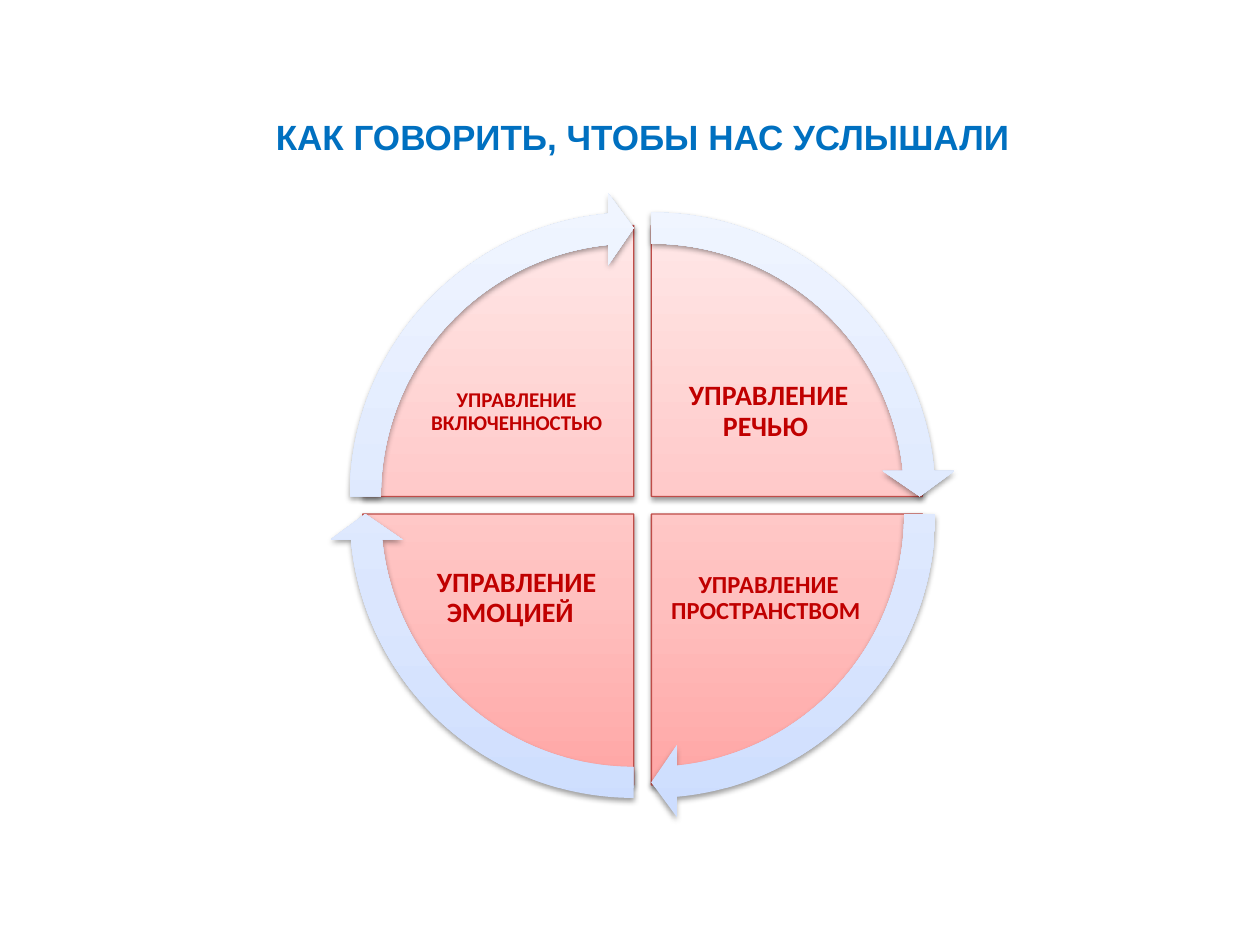
from lxml import etree
from pptx import Presentation
from pptx import util as u
from pptx.dml.color import RGBColor
from pptx.enum import shapes, text
from pptx.oxml import ns

WIDTH, HEIGHT = 10, 7.5
CENTRE_X, CENTRE_Y = 5.1, 4.01
HALF_GAP = 0.07
PIE_SIZE, ARROW_SIZE = 4.3, 4.83
LABEL_WIDTH, LABEL_HEIGHT = 1.59, 1.18
LABEL_DX, LABEL_DY = 1, 0.74
QUARTER_TURN, FULL_TURN = 54, 216
ARROW_SWEEP = 50.725
PINK = ((0, "FFA6A5"), (35, "FFC0BF"), (100, "FFE7E7"))
PALE_BLUE = ((0, "CDDDFE"), (35, "DBE6FE"), (100, "F0F5FF"))
QUADRANTS = (
    ("УПРАВЛЕНИЕ РЕЧЬЮ ", 16, 1, -1, 162),
    ("УПРАВЛЕНИЕ ПРОСТРАНСТВОМ ", 14, 1, 1, 0),
    ("УПРАВЛЕНИЕ ЭМОЦИЕЙ  ", 16, -1, 1, 54),
    ("УПРАВЛЕНИЕ ВКЛЮЧЕННОСТЬЮ", 12, -1, -1, 108),
)


def colour(value):
    """Turn a hex string into a colour."""
    return RGBColor.from_string(value)


def add_element(parent, tag, **attributes):
    """Append a drawing element with its attributes."""
    return etree.SubElement(
        parent, ns.qn(tag), {key: str(value) for key, value in attributes.items()})


def centred_box(x, y, width, height):
    """Give the left, top, width and height of a box around a point."""
    return [u.Inches(v) for v in (x - width / 2, y - height / 2, width, height)]


def fill_upwards(shape, stops):
    """Fill a shape with a gradient that runs from bottom to top."""
    shape.fill.gradient()
    gradient = shape.fill._fill._gradFill
    for child in list(gradient):
        gradient.remove(child)
    stop_list = add_element(gradient, "a:gsLst")
    for position, value in stops:
        stop = add_element(stop_list, "a:gs", pos=position * 1000)
        add_element(stop, "a:srgbClr", val=value)
    add_element(gradient, "a:lin", ang=16200000, scaled=0)


def add_shadow(shape):
    """Give a shape a soft shadow below it."""
    shape.shadow.inherit = False
    effects = shape._element.spPr.find(ns.qn("a:effectLst"))
    shadow = add_element(effects, "a:outerShdw", blurRad=40000, dist=20000,
                         dir=5400000, rotWithShape=0)
    black = add_element(shadow, "a:srgbClr", val="000000")
    add_element(black, "a:alpha", val=38000)


def add_ring_part(group, kind, side_x, side_y, size, adjustments, stops):
    """Add one quarter of the cycle, moved away from its centre."""
    box = centred_box(CENTRE_X + side_x * HALF_GAP, CENTRE_Y + side_y * HALF_GAP,
                      size, size)
    part = group.shapes.add_shape(kind, *box)
    for index, value in enumerate(adjustments):
        part.adjustments[index] = value
    fill_upwards(part, stops)
    part.line.fill.background()
    add_shadow(part)
    return part


def add_sector(group, side_x, side_y, start):
    """Add a pink sector with a thin outline."""
    end = (start + QUARTER_TURN) % FULL_TURN
    sector = add_ring_part(group, shapes.MSO_SHAPE.PIE, side_x, side_y, PIE_SIZE,
                           (start, end), PINK)
    sector.line.color.rgb = colour("BF4C48")
    sector.line.width = u.Pt(0.75)


def add_arrow(group, side_x, side_y, start):
    """Add a curved arrow along the rim of a sector."""
    add_ring_part(group, shapes.MSO_SHAPE.CIRCULAR_ARROW, side_x, side_y, ARROW_SIZE,
                  (0.051, 3.275, start + ARROW_SWEEP, start, 0.059), PALE_BLUE)


def write(paragraph, wording, size, font, value):
    """Write a bold centred run."""
    paragraph.alignment = text.PP_ALIGN.CENTER
    run = paragraph.add_run()
    run.text = wording
    run.font.size = u.Pt(size)
    run.font.name = font
    run.font.bold = True
    run.font.color.rgb = colour(value)


def add_label(group, wording, size, side_x, side_y):
    """Add the label of a sector."""
    box = centred_box(CENTRE_X + side_x * LABEL_DX, CENTRE_Y + side_y * LABEL_DY,
                      LABEL_WIDTH, LABEL_HEIGHT)
    frame = group.shapes.add_textbox(*box).text_frame
    frame.word_wrap = True
    frame.vertical_anchor = text.MSO_ANCHOR.MIDDLE
    frame.margin_left = frame.margin_right = u.Inches(0.02)
    frame.margin_top = frame.margin_bottom = u.Inches(0.02)
    paragraph = frame.paragraphs[0]
    paragraph.line_spacing = 0.9
    paragraph.space_after = u.Pt(size * 0.35)
    write(paragraph, wording, size, "Calibri", "C00000")


def set_title(slide, wording):
    """Place and format the title."""
    title = slide.shapes.title
    title.left, title.top = u.Inches(0.6), u.Inches(0.77)
    title.width, title.height = u.Inches(0.9 * WIDTH), u.Inches(0.62)
    title.text_frame.vertical_anchor = text.MSO_ANCHOR.MIDDLE
    write(title.text_frame.paragraphs[0], wording, 20, "Arial", "0070C0")


def main():
    """Build the slide."""
    deck = Presentation()
    deck.slide_width, deck.slide_height = u.Inches(WIDTH), u.Inches(HEIGHT)
    slide = deck.slides.add_slide(deck.slide_layouts[5])
    set_title(slide, "КАК ГОВОРИТЬ, ЧТОБЫ НАС УСЛЫШАЛИ")
    cycle = slide.shapes.add_group_shape()
    for wording, size, side_x, side_y, start in QUADRANTS:
        add_sector(cycle, side_x, side_y, start)
        add_label(cycle, wording, size, side_x, side_y)
    for _, _, side_x, side_y, start in QUADRANTS:
        add_arrow(cycle, side_x, side_y, start)
    deck.save("out.pptx")


if __name__ == "__main__":
    main()
